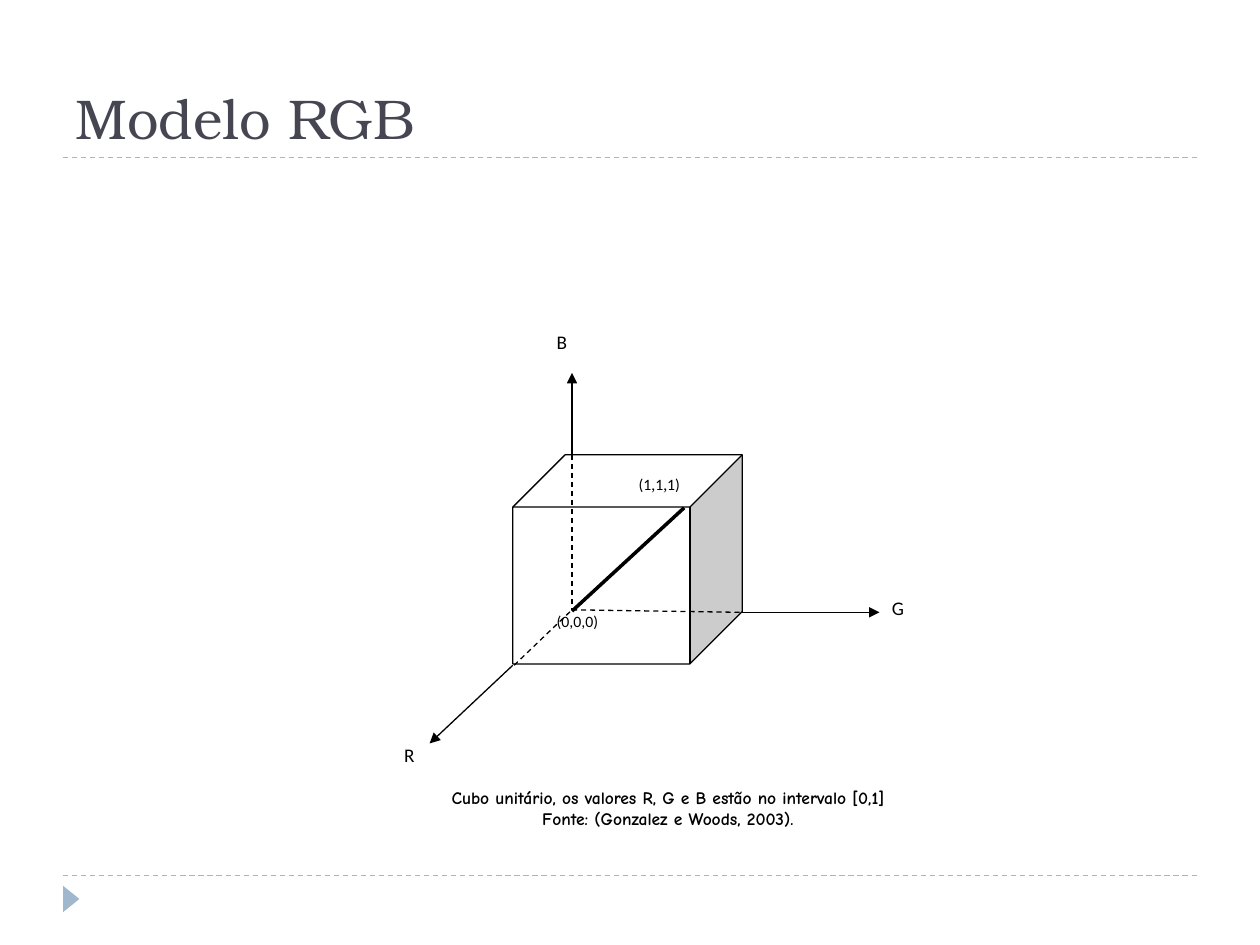
from lxml import etree
from pptx import Presentation
from pptx.dml.color import RGBColor
from pptx.enum import dml, shapes, text
from pptx.oxml.ns import qn
from pptx.util import Inches, Pt

BLACK = RGBColor(0, 0, 0)
WHITE = RGBColor(255, 255, 255)
BLUE = RGBColor(0x9F, 0xB8, 0xCD)
SLATE = RGBColor(0x46, 0x46, 0x53)
SANS, SERIF, COMIC = "Calibri", "Times New Roman", "Comic Neue"

TITLE = "Modelo RGB"
CAPTION = ["Cubo unitário, os valores R, G e B estão no intervalo [0,1]",
           "Fonte: (Gonzalez e Woods, 2003)."]
RULES = [6.95, 1.25]
# pieces of text, left, top, width, height, size
LABELS = [
    (["R"], 3.11, 5.85, 0.38, 0.35, 11),
    (["G"], 6.98, 4.68, 0.38, 0.35, 11),
    (["B"], 4.32, 2.57, 0.38, 0.35, 11),
    (["(0,0,0)"], 4.32, 4.81, 0.81, 0.3, 9),
    (["(1", ",", "1", ",", "1)"], 4.97, 3.72, 0.81, 0.3, 9),
]
AXES = [((4.07, 5.28), (3.41, 5.9)),
        ((5.89, 4.86), (6.98, 4.86)),
        ((4.54, 3.61), (4.54, 2.96))]
HIDDEN = [((4.54, 4.84), (5.89, 4.86)),
          ((4.08, 5.28), (4.54, 4.84)),
          ((4.54, 3.61), (4.54, 4.84))]
GRAYS = ((4.54, 4.85), (5.43, 4.03))


def box(*nums):
    return [Inches(n) for n in nums]


def style(run, face, size, color=BLACK, bold=False):
    run.font.name, run.font.size, run.font.bold = face, Pt(size), bold
    run.font.color.rgb = color


def draw_line(parent, start, end, color=BLACK, width=0.75, dash=False, head=False):
    line = parent.add_connector(shapes.MSO_CONNECTOR.STRAIGHT, *box(*start, *end))
    line.line.color.rgb = color
    line.line.width = Pt(width)
    if dash:
        line.line.dash_style = dml.MSO_LINE.DASH
    if head:
        etree.SubElement(line.line._get_or_add_ln(), qn("a:tailEnd"), type="triangle")
    etree.SubElement(line._element.spPr, qn("a:effectLst"))


def add_solid(parent, kind, place, fill):
    solid = parent.add_shape(kind, *box(*place))
    solid.shadow.inherit = False
    solid.fill.solid()
    solid.fill.fore_color.rgb = fill
    return solid


def add_label(parent, parts, x, y, w, h, size):
    frame = parent.add_textbox(*box(x, y, w, h)).text_frame
    frame.word_wrap = True
    par = frame.paragraphs[0]
    par.space_after = Pt(10)
    for part in parts:
        run = par.add_run()
        run.text = part
        style(run, SERIF if part == "," else SANS, size)


def add_title(slide):
    title = slide.shapes.title
    title.left, title.top, title.width, title.height = box(0.5, 0.17, 9, 1.08)
    frame = title.text_frame
    frame.text = TITLE
    frame.vertical_anchor = text.MSO_ANCHOR.BOTTOM
    par = frame.paragraphs[0]
    par.alignment = text.PP_ALIGN.LEFT
    style(par.runs[0], "TeX Gyre Bonum", 32, SLATE)


def add_cube(slide):
    group = slide.shapes.add_group_shape().shapes
    cube = add_solid(group, shapes.MSO_SHAPE.CUBE, (4.07, 3.61, 1.82, 1.66), WHITE)
    cube.adjustments[0] = 0.25
    cube.line.color.rgb = BLACK
    cube.line.width = Pt(0.75)
    for axis in AXES:
        draw_line(group, *axis, head=True)
    for edge in HIDDEN:
        draw_line(group, *edge, dash=True)
    draw_line(group, *GRAYS, width=2)
    for label in LABELS:
        add_label(group, *label)


def add_caption(slide):
    frame = slide.shapes.add_textbox(*box(3.07, 6.19, 4.71, 0.44)).text_frame
    frame.word_wrap = True
    frame.vertical_anchor = text.MSO_ANCHOR.MIDDLE
    frame.text = "\n".join(CAPTION)
    for par in frame.paragraphs:
        par.alignment = text.PP_ALIGN.CENTER
        style(par.runs[0], COMIC, 10, bold=True)
    # The first line sits slightly left of the second
    frame.paragraphs[0]._p.get_or_add_pPr().set("marR", str(Inches(0.25)))


def main():
    deck = Presentation()
    deck.slide_width, deck.slide_height = box(10, 7.5)
    slide = deck.slides.add_slide(deck.slide_layouts[5])
    for y in RULES:
        draw_line(slide.shapes, (0.5, y), (9.5, y), BLUE, dash=True)
    mark = add_solid(slide.shapes, shapes.MSO_SHAPE.ISOSCELES_TRIANGLE,
                     (0.46, 7.07, 0.21, 0.13), BLUE)
    mark.rotation = 90
    mark.line.fill.background()
    add_title(slide)
    add_cube(slide)
    add_caption(slide)
    deck.save("out.pptx")


if __name__ == "__main__":
    main()
